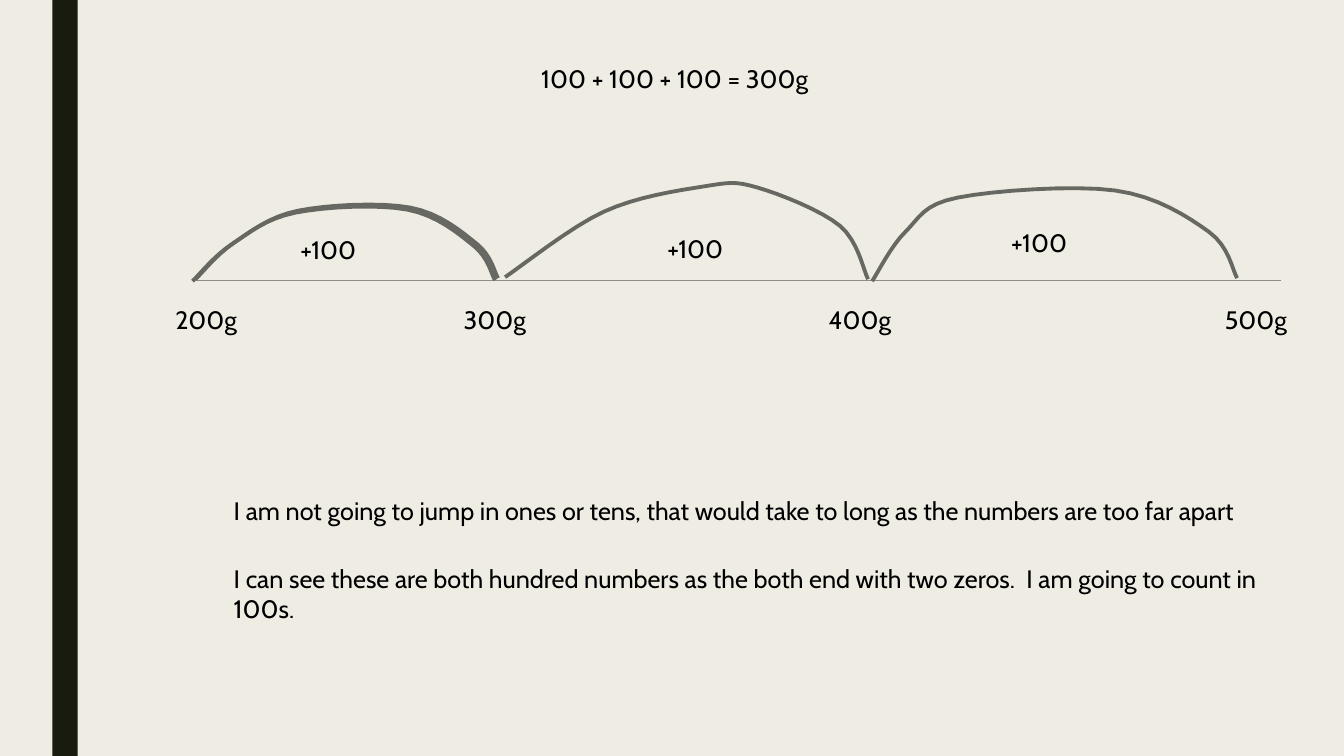
import dataclasses

import pptx
import pptx.dml.color
import pptx.enum.shapes
import pptx.oxml.ns
import pptx.util
from lxml import etree

Inches = pptx.util.Inches
Point = tuple[float, float]

BACKGROUND, BAR, AXIS, PEN, INK = "EFEDE3", "191B0E", "8C8D86", "686863", "000000"
SLIDE_WIDTH, SLIDE_HEIGHT = 13.33, 7.5
AXIS_START, AXIS_END, AXIS_Y = 1.92, 12.71, 2.78
MARK_TOP = 2.97
STEP_WIDTH = 1.05
REASONING_LEFT, REASONING_WIDTH = 2.22, 11.04
LINE_HEIGHT = 0.31
STEPS_PER_CURVE = 8
RETRACE = (-0.03, 0.02)


@dataclasses.dataclass(frozen=True)
class Mark:
    """A weight named under the number line."""
    grams: int
    left: float
    width: float


@dataclasses.dataclass(frozen=True)
class Jump:
    """One arc: the points it passes, and the corner of its step label."""
    takeoff: Point
    rise: Point
    crest_start: Point
    crest_end: Point
    fall: Point
    landing: Point
    step_at: Point
    strokes: tuple[Point, ...] = ((0, 0),)  # offset of each pen stroke

    def anchors(self) -> list[Point]:
        return [self.takeoff, self.rise, self.crest_start,
                self.crest_end, self.fall, self.landing]


MARKS = [
    Mark(200, 1.64, 1.12),
    Mark(300, 4.5, 1.05),
    Mark(400, 8.12, 1.4),
    Mark(500, 12.05, 1.12),
]
JUMPS = [
    Jump(takeoff=(1.94, 2.77), rise=(2.32, 2.41), crest_start=(2.96, 2.09),
         crest_end=(4.07, 2.06), fall=(4.73, 2.42), landing=(4.94, 2.76),
         step_at=(2.88, 2.28), strokes=((0, 0), RETRACE)),
    Jump(takeoff=(5.01, 2.75), rise=(5.99, 2.1), crest_start=(6.98, 1.85),
         crest_end=(7.51, 1.86), fall=(8.33, 2.24), landing=(8.61, 2.77),
         step_at=(6.52, 2.27)),
    Jump(takeoff=(8.65, 2.79), rise=(8.98, 2.3), crest_start=(9.5, 1.96),
         crest_end=(11.06, 1.89), fall=(11.99, 2.3), landing=(12.27, 2.76),
         step_at=(9.93, 2.21)),
]
REASONING = {  # top of each thought: its lines
    4.86: ["I am not going to jump in ones or tens, that would take to long "
           "as the numbers are too far apart"],
    5.54: ["I can see these are both hundred numbers as the both end with two zeros.  "
           "I am going to count in", "100s."],
}


def rgb(color: str) -> pptx.dml.color.RGBColor:
    return pptx.dml.color.RGBColor.from_string(color)


def blend(before: float, start: float, end: float, after: float, t: float) -> float:
    """Catmull-Rom value at t between start and end."""
    return start + t / 2 * (
        (end - before)
        + t * (2 * before - 5 * start + 4 * end - after)
        + t * t * (3 * (start - end) + after - before))


def smooth(anchors: list[Point]) -> list[Point]:
    """Points of a smooth curve through all anchors."""
    padded = [anchors[0], *anchors, anchors[-1]]
    curve = [anchors[0]]
    for neighbours in zip(padded, padded[1:], padded[2:], padded[3:]):
        xs, ys = zip(*neighbours)
        for step in range(1, STEPS_PER_CURVE + 1):
            t = step / STEPS_PER_CURVE
            curve.append((blend(*xs, t), blend(*ys, t)))
    return curve


def draw_text(slide, text: str, *, left: float, top: float, width: float,
              size: float = 18, font: str = "Cabin", color: str = INK) -> None:
    lines = text.count("\n") + 1
    frame = slide.shapes.add_textbox(
        Inches(left), Inches(top), Inches(width),
        Inches(0.1 + lines * LINE_HEIGHT)).text_frame
    frame.word_wrap = True
    frame.text = text
    for paragraph in frame.paragraphs:
        paragraph.font.size = pptx.util.Pt(size)
        paragraph.font.name = font
        paragraph.font.color.rgb = rgb(color)


def draw_stroke(slide, curve: list[Point], offset: Point) -> None:
    dx, dy = offset
    start, *rest = [(Inches(x + dx), Inches(y + dy)) for x, y in curve]
    builder = slide.shapes.build_freeform(*start)
    builder.add_line_segments(rest, close=False)
    arc = builder.convert_to_shape()
    arc.shadow.inherit = False
    arc.fill.background()
    arc.line.color.rgb = rgb(PEN)
    arc.line.width = pptx.util.Pt(2.75)


def draw_jump(slide, jump: Jump, step: int) -> None:
    curve = smooth(jump.anchors())
    for offset in jump.strokes:
        draw_stroke(slide, curve, offset)
    left, top = jump.step_at
    draw_text(slide, f"+{step}", left=left, top=top, width=STEP_WIDTH)


def draw_axis(slide) -> None:
    axis = slide.shapes.add_connector(
        pptx.enum.shapes.MSO_CONNECTOR.STRAIGHT,
        Inches(AXIS_START), Inches(AXIS_Y), Inches(AXIS_END), Inches(AXIS_Y))
    axis.line.color.rgb = rgb(AXIS)
    axis.line.width = pptx.util.Pt(0.5)
    etree.SubElement(axis._element.spPr, pptx.oxml.ns.qn("a:effectLst"))


def draw_side_bar(slide) -> None:
    bar = slide.shapes.add_shape(
        pptx.enum.shapes.MSO_SHAPE.RECTANGLE,
        Inches(0.52), 0, Inches(0.25), Inches(SLIDE_HEIGHT))
    bar.shadow.inherit = False
    bar.fill.solid()
    bar.fill.fore_color.rgb = rgb(BAR)
    bar.line.fill.background()


def main() -> None:
    deck = pptx.Presentation()
    deck.slide_width, deck.slide_height = Inches(SLIDE_WIDTH), Inches(SLIDE_HEIGHT)
    slide = deck.slides.add_slide(deck.slide_layouts[6])

    # Background and side bar
    slide.background.fill.solid()
    slide.background.fill.fore_color.rgb = rgb(BACKGROUND)
    draw_side_bar(slide)

    # Number line: marks, and a jump from each mark to the next
    draw_axis(slide)
    for mark in MARKS:
        draw_text(slide, f"{mark.grams}g", left=mark.left, top=MARK_TOP,
                  width=mark.width)
    steps = [end.grams - start.grams for start, end in zip(MARKS, MARKS[1:])]
    for jump, step in zip(JUMPS, steps):
        draw_jump(slide, jump, step)

    # Sum of the jumps
    draw_text(slide, f"{' + '.join(map(str, steps))} = {sum(steps)}g",
              left=5.27, top=0.58, width=3.83)

    # Reasoning
    for top, lines in REASONING.items():
        draw_text(slide, "\n".join(lines), left=REASONING_LEFT, top=top,
                  width=REASONING_WIDTH)

    deck.save("out.pptx")


if __name__ == "__main__":
    main()
